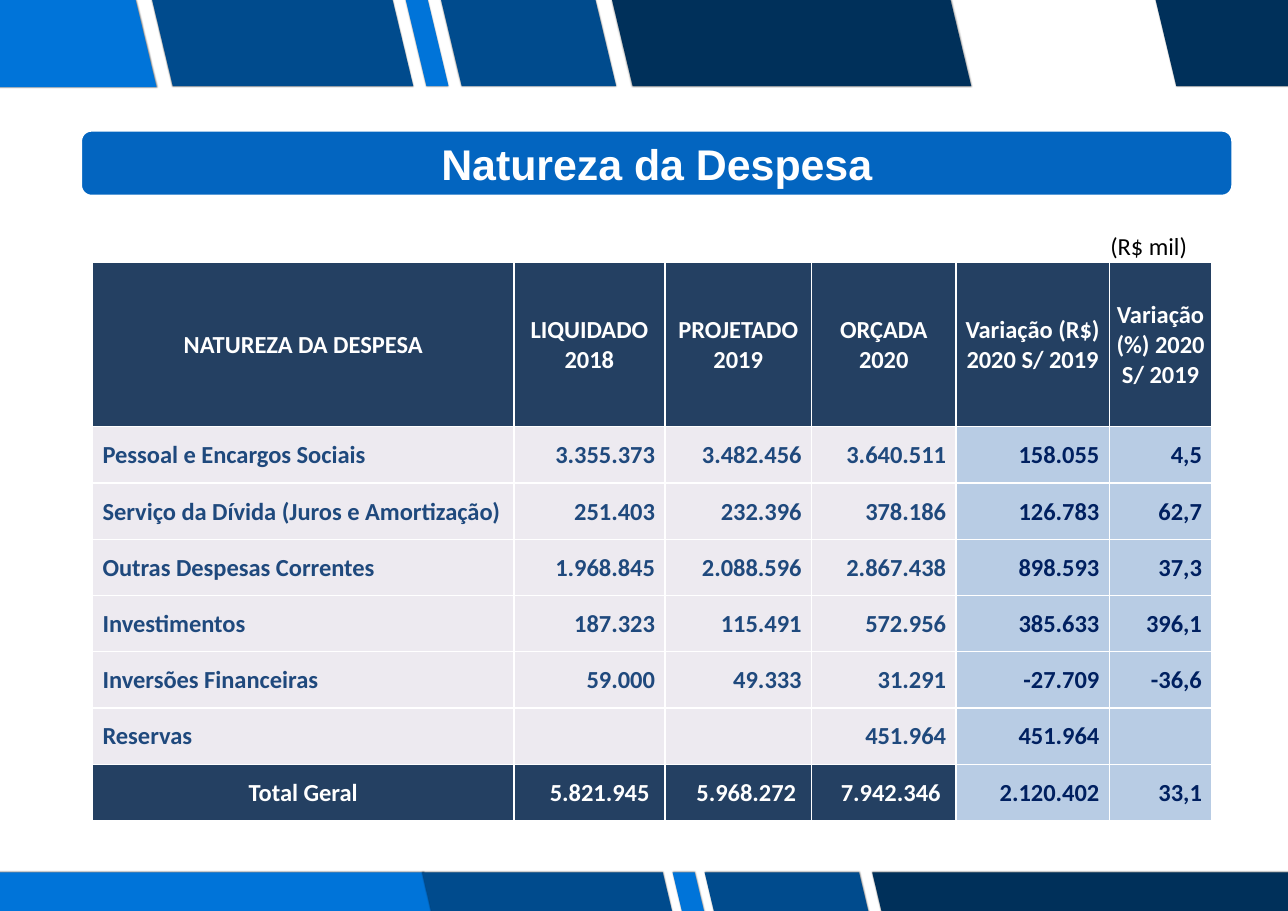
"""Build the budget slide that breaks expenditure down by nature."""
from lxml import etree
from pptx import Presentation
from pptx import util as u
from pptx.dml.color import RGBColor
from pptx.enum import shapes, text
from pptx.oxml import parse_xml

DRAWING = "http://schemas.openxmlformats.org/drawingml/2006/main"
BRIGHT, MEDIUM, DEEP = "0074D9", "004B8D", "00305A"
NAVY, PALE, LIGHT_BLUE = "244062", "EDEAF0", "B8CCE4"
SLANT = 0.24
RIGHT_EDGE = 11.7


def paint(fill, color):
    fill.solid()
    fill.fore_color.rgb = RGBColor.from_string(color)


def write(frame, words, size=16, font="Calibri", color="FFFFFF", bold=True,
          align=text.PP_ALIGN.LEFT):
    para = frame.paragraphs[0]
    para.alignment = align
    span = para.add_run()
    span.text = words
    span.font.size = u.Pt(size)
    span.font.name = font
    span.font.bold = bold
    span.font.color.rgb = RGBColor.from_string(color)


deck = Presentation()
deck.slide_width = u.Inches(11.68)
deck.slide_height = u.Inches(8.26)
page = deck.slides.add_slide(deck.slide_layouts[5])

bands = [
    (-0.02, 1.23, 0, 0.79, BRIGHT),
    (1.38, 3.56, 0, 0.78, MEDIUM),
    (3.68, 3.88, 0, 0.78, BRIGHT),
    (4, 5.4, 0, 0.78, MEDIUM),
    (5.55, 8.62, 0, 0.78, DEEP),
    (10.48, 11.69, 0, 0.78, DEEP),
    (-0.02, 3.84, 7.91, 0.4, BRIGHT),
    (3.83, 6.01, 7.91, 0.4, MEDIUM),
    (6.1, 6.3, 7.91, 0.79, BRIGHT),
    (6.39, 7.79, 7.91, 0.79, MEDIUM),
    (7.91, 11.7, 7.91, 0.79, DEEP),
]
for left, right, top, height, color in bands:
    shift = SLANT * height
    low_left = left if left < 0 else left + shift
    low_right = min(right + shift, RIGHT_EDGE)
    corners = [(right, top), (low_right, top + height), (low_left, top + height)]
    outline = page.shapes.build_freeform(u.Inches(left), u.Inches(top))
    outline.add_line_segments([(u.Inches(x), u.Inches(y)) for x, y in corners])
    band = outline.convert_to_shape()
    paint(band.fill, color)
    band.line.fill.background()
    band.shadow.inherit = False
    effects = band.element.spPr.find(f"{{{DRAWING}}}effectLst")
    effects.append(parse_xml(
        f'<a:outerShdw xmlns:a="{DRAWING}" blurRad="12700" dist="0" dir="5400000">'
        '<a:srgbClr val="000000"><a:alpha val="50000"/></a:srgbClr></a:outerShdw>'))

place = [u.Inches(n) for n in (0.73, 1.18, 10.45, 0.6)]
bar = page.shapes.add_shape(shapes.MSO_SHAPE.ROUNDED_RECTANGLE, *place)
bar.shadow.inherit = False
paint(bar.fill, "0365C0")
paint(bar.line.fill, "FFFFFF")
bar.line.width = u.Pt(2)

title = page.shapes.title
title.left, title.top, title.width, title.height = place
title.text_frame.vertical_anchor = text.MSO_ANCHOR.MIDDLE
title.text_frame.auto_size = text.MSO_AUTO_SIZE.NONE
write(title.text_frame, "Natureza da Despesa", size=28, font="Arial",
      align=text.PP_ALIGN.CENTER)
bar.element.addnext(title.element)

widths = [3.82, 1.37, 1.33, 1.31, 1.39, 0.93]
heights = [0.41, 1.49] + [0.51] * 7
rows = [
    ["", "", "", "", "", "(R$ mil)"],
    ["NATUREZA DA DESPESA", "LIQUIDADO 2018", "PROJETADO 2019", "ORÇADA 2020",
     "Variação (R$) 2020 S/ 2019", "Variação (%) 2020 S/ 2019"],
    ["Pessoal e Encargos Sociais", "3.355.373", "3.482.456", "3.640.511", "158.055", "4,5"],
    ["Serviço da Dívida (Juros e Amortização)", "251.403", "232.396", "378.186",
     "126.783", "62,7"],
    ["Outras Despesas Correntes", "1.968.845", "2.088.596", "2.867.438", "898.593", "37,3"],
    ["Investimentos", "187.323", "115.491", "572.956", "385.633", "396,1"],
    ["Inversões Financeiras", "59.000", "49.333", "31.291", "-27.709", "-36,6"],
    ["Reservas", "", "", "451.964", "451.964", ""],
    ["Total Geral", "5.821.945", "5.968.272", "7.942.346", "2.120.402", "33,1"],
]
UNIT, HEADER, TOTAL = 0, 1, len(rows) - 1
table = page.shapes.add_table(
    len(rows), len(widths), u.Inches(0.84), u.Inches(1.97),
    u.Inches(sum(widths)), u.Inches(sum(heights))).table
table.first_row = table.horz_banding = False
for column, width in zip(table.columns, widths):
    column.width = u.Inches(width)
for line, height in zip(table.rows, heights):
    line.height = u.Inches(height)

for r, row in enumerate(rows):
    for c, words in enumerate(row):
        cell = table.cell(r, c)
        color, bold, align = "FFFFFF", True, text.PP_ALIGN.CENTER
        fill, left, right = NAVY, 0.01, 0.01
        anchor = text.MSO_ANCHOR.MIDDLE
        if r == UNIT:
            color, bold, align = "000000", False, text.PP_ALIGN.LEFT
            fill, anchor = None, text.MSO_ANCHOR.BOTTOM
        elif r > HEADER and c > 0:
            align, right = text.PP_ALIGN.RIGHT, 0.09
            if c > 3:
                color, fill = "002060", LIGHT_BLUE
            elif r == TOTAL:
                right = 0.14
            else:
                color, fill = "1F497D", PALE
        elif HEADER < r < TOTAL:
            color, fill, left, align = "1F497D", PALE, 0.09, text.PP_ALIGN.LEFT

        cell.margin_left, cell.margin_right = u.Inches(left), u.Inches(right)
        cell.margin_top, cell.margin_bottom = u.Inches(0.01), 0
        cell.vertical_anchor = anchor
        properties = cell._tc.get_or_add_tcPr()
        for side in ("lnL", "lnR", "lnT", "lnB"):
            border = etree.SubElement(properties, f"{{{DRAWING}}}{side}", w="12700")
            solid = etree.SubElement(border, f"{{{DRAWING}}}solidFill")
            etree.SubElement(solid, f"{{{DRAWING}}}srgbClr", val="FFFFFF")
        if fill:
            paint(cell.fill, fill)
        else:
            cell.fill.background()
        if words:
            write(cell.text_frame, words, color=color, bold=bold, align=align)

deck.save("out.pptx")
